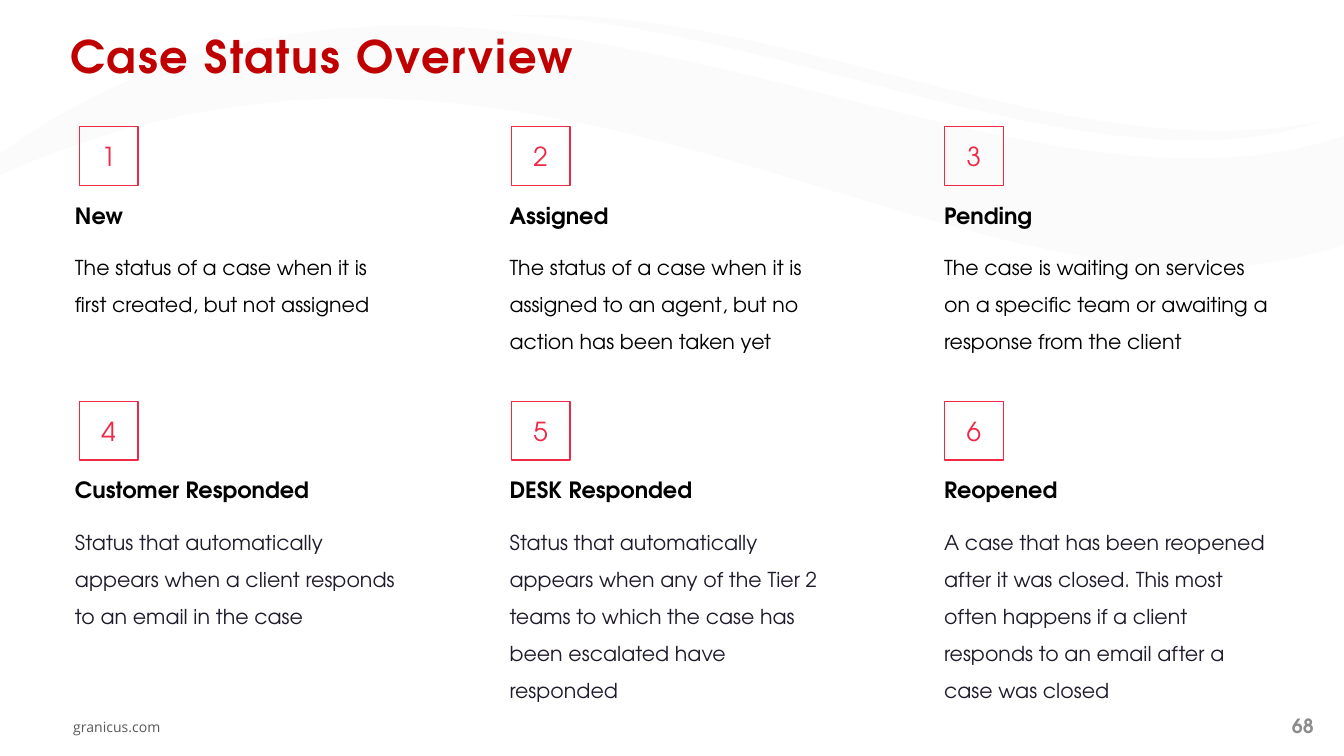
from dataclasses import dataclass

from lxml import etree
from pptx import Presentation
from pptx.dml.color import RGBColor
from pptx.enum.shapes import MSO_SHAPE
from pptx.enum.text import MSO_ANCHOR, MSO_AUTO_SIZE, PP_ALIGN
from pptx.oxml.ns import qn
from pptx.util import Pt

RECTANGLE = MSO_SHAPE.RECTANGLE
TOP, MIDDLE, BOTTOM = MSO_ANCHOR.TOP, MSO_ANCHOR.MIDDLE, MSO_ANCHOR.BOTTOM
LEFT, CENTER, RIGHT = PP_ALIGN.LEFT, PP_ALIGN.CENTER, PP_ALIGN.RIGHT
GROW, FIXED = MSO_AUTO_SIZE.SHAPE_TO_FIT_TEXT, MSO_AUTO_SIZE.NONE

HEADING_FONT = "TeX Gyre Adventor"
FOOTER_FONT = "Open Sans"
COLORS = {
    "title": "C00000",
    "badge": "EE2845",
    "black": "000000",
    "ink": "201B2C",
    "wave": "F2F2F2",
    "page": "8C8C8C",
    "site": "595959",
}

COLUMNS = 3
COLUMN_STEP, ROW_STEP = 232.8, 147.2
TEXT_LEFT, TEXT_WIDTH = 33.1, 188
BADGE_LEFTS = (42.5, 273.9, 506)
BADGE_TOP, BADGE_SIZE = 67.8, 31.5
HEADING_TOP, HEADING_HEIGHT = 104.2, 21.8
BODY_TOP, LINE_HEIGHT, BODY_PADDING = 126.5, 20, 5

Point = tuple[float, float]


@dataclass(frozen=True)
class CaseStatus:
    heading: str
    description: str
    lines: int
    color: str


STATUSES = (
    CaseStatus("New", "The status of a case when it is first created, but not assigned", 2, "black"),
    CaseStatus("Assigned", "The status of a case when it is assigned to an agent, "
               "but no action has been taken yet", 3, "black"),
    CaseStatus("Pending", "The case is waiting on services on a specific team "
               "or awaiting a response from the client", 3, "black"),
    CaseStatus("Customer Responded", "Status that automatically appears when a client "
               "responds to an email in the case", 3, "ink"),
    CaseStatus("DESK Responded", "Status that automatically appears when any of the Tier 2 "
               "teams to which the case has been escalated have responded", 5, "ink"),
    CaseStatus("Reopened", "A case that has been reopened after it was closed. This most often "
               "happens if a client responds to an email after a case was closed", 5, "ink"),
)

# Each wave is a closed chain of Bezier curves: a start, then three points a curve.
LARGE_WAVE = (
    (-12.2, 91.4),
    (-12.2, 99.4), (-12.2, 99.4), (-12.2, 99.4),
    (289.4, -45.4), (521.3, 198.7), (720, 131),
    (720, 72.7), (720, 72.7), (720, 72.7),
    (521.3, 140.4), (240.5, -104.4), (-12.2, 91.4),
)
SMALL_WAVE = (
    (270, 8.6),
    (406.8, 7.9), (586.1, 106.6), (708.5, 64.8),
    (570.2, 92.9), (419, 0), (270, 8.6),
)


def rgb(color: str) -> RGBColor:
    return RGBColor.from_string(COLORS[color])


def bend_segments(shape) -> None:
    """Turn every three straight segments of a freeform into one Bezier curve."""
    segments = list(shape._element.iter(qn("a:lnTo")))
    for first in range(0, len(segments), 3):
        curve = etree.Element(qn("a:cubicBezTo"))
        segments[first].addprevious(curve)
        for segment in segments[first:first + 3]:
            curve.append(segment[0])
            segment.getparent().remove(segment)


def draw_wave(slide, wave: tuple[Point, ...]) -> None:
    start, *controls = [(Pt(x), Pt(y)) for x, y in wave]
    builder = slide.shapes.build_freeform(*start)
    builder.add_line_segments(controls, close=True)
    shape = builder.convert_to_shape()
    bend_segments(shape)
    shape.shadow.inherit = False
    shape.line.fill.background()
    shape.fill.solid()
    shape.fill.fore_color.rgb = rgb("wave")
    fill_color = shape._element.spPr.find(qn("a:solidFill"))[0]
    etree.SubElement(fill_color, qn("a:alpha"), val="30000")


def write(shape, text: str, *, size: float, color: str, font: str = HEADING_FONT,
          bold: bool = False, align=LEFT, anchor=TOP, line_spacing: float = 1.0,
          tracking: int = 0, wrap: bool = True, auto_size=FIXED) -> None:
    """Fill a shape with one formatted paragraph; tracking is in 1/100 pt."""
    frame = shape.text_frame
    frame.word_wrap = wrap
    frame.auto_size = auto_size
    frame.vertical_anchor = anchor
    paragraph = frame.paragraphs[0]
    paragraph.alignment = align
    paragraph.line_spacing = line_spacing
    run = paragraph.add_run()
    run.text = text
    run.font.name = font
    run.font.size = Pt(size)
    run.font.bold = bold
    run.font.color.rgb = rgb(color)
    if tracking:
        run.font._element.set("spc", str(tracking))


def add_box(slide, left: float, top: float, width: float, height: float):
    return slide.shapes.add_textbox(Pt(left), Pt(top), Pt(width), Pt(height))


def draw_badge(slide, number: int, left: float, top: float) -> None:
    badge = slide.shapes.add_shape(RECTANGLE, Pt(left), Pt(top), Pt(BADGE_SIZE), Pt(BADGE_SIZE))
    badge.shadow.inherit = False
    badge.fill.background()
    badge.line.color.rgb = rgb("badge")
    badge.line.width = Pt(0.75)
    write(badge, str(number), size=14, color="badge", align=CENTER, anchor=MIDDLE)


def draw_status(slide, index: int, status: CaseStatus) -> None:
    row, column = divmod(index, COLUMNS)
    left, offset = TEXT_LEFT + column * COLUMN_STEP, row * ROW_STEP
    description = add_box(slide, left, BODY_TOP + offset, TEXT_WIDTH,
                          BODY_PADDING + status.lines * LINE_HEIGHT)
    write(description, status.description, size=11, color=status.color,
          line_spacing=1.5, auto_size=GROW)
    heading = add_box(slide, left, HEADING_TOP + offset, TEXT_WIDTH, HEADING_HEIGHT)
    write(heading, status.heading, size=12, color="black", bold=True,
          anchor=BOTTOM, auto_size=GROW)
    draw_badge(slide, index + 1, BADGE_LEFTS[column], BADGE_TOP + offset)


def draw_footer(slide) -> None:
    page = add_box(slide, 670, 381.6, 37.4, 14.4)
    frame = page.text_frame
    frame.margin_left = frame.margin_right = Pt(3.6)
    frame.margin_top = frame.margin_bottom = Pt(2)
    write(page, "68", size=10.5, color="page", bold=True, align=RIGHT, anchor=MIDDLE)
    site = add_box(slide, 32.1, 381.6, 61.9, 16.6)
    write(site, "granicus.com", size=7.5, color="site", font=FOOTER_FONT,
          wrap=False, auto_size=GROW)


def main() -> None:
    presentation = Presentation()
    presentation.slide_width, presentation.slide_height = Pt(720), Pt(405)
    slide = presentation.slides.add_slide(presentation.slide_layouts[6])
    for wave in (LARGE_WAVE, SMALL_WAVE):
        draw_wave(slide, wave)
    draw_footer(slide)
    title = add_box(slide, 30.5, 15.1, 656, 28.8)
    write(title, "Case Status Overview", size=24, color="title", bold=True,
          line_spacing=0.9, tracking=100)
    for index, status in enumerate(STATUSES):
        draw_status(slide, index, status)
    presentation.save("out.pptx")


if __name__ == "__main__":
    main()
